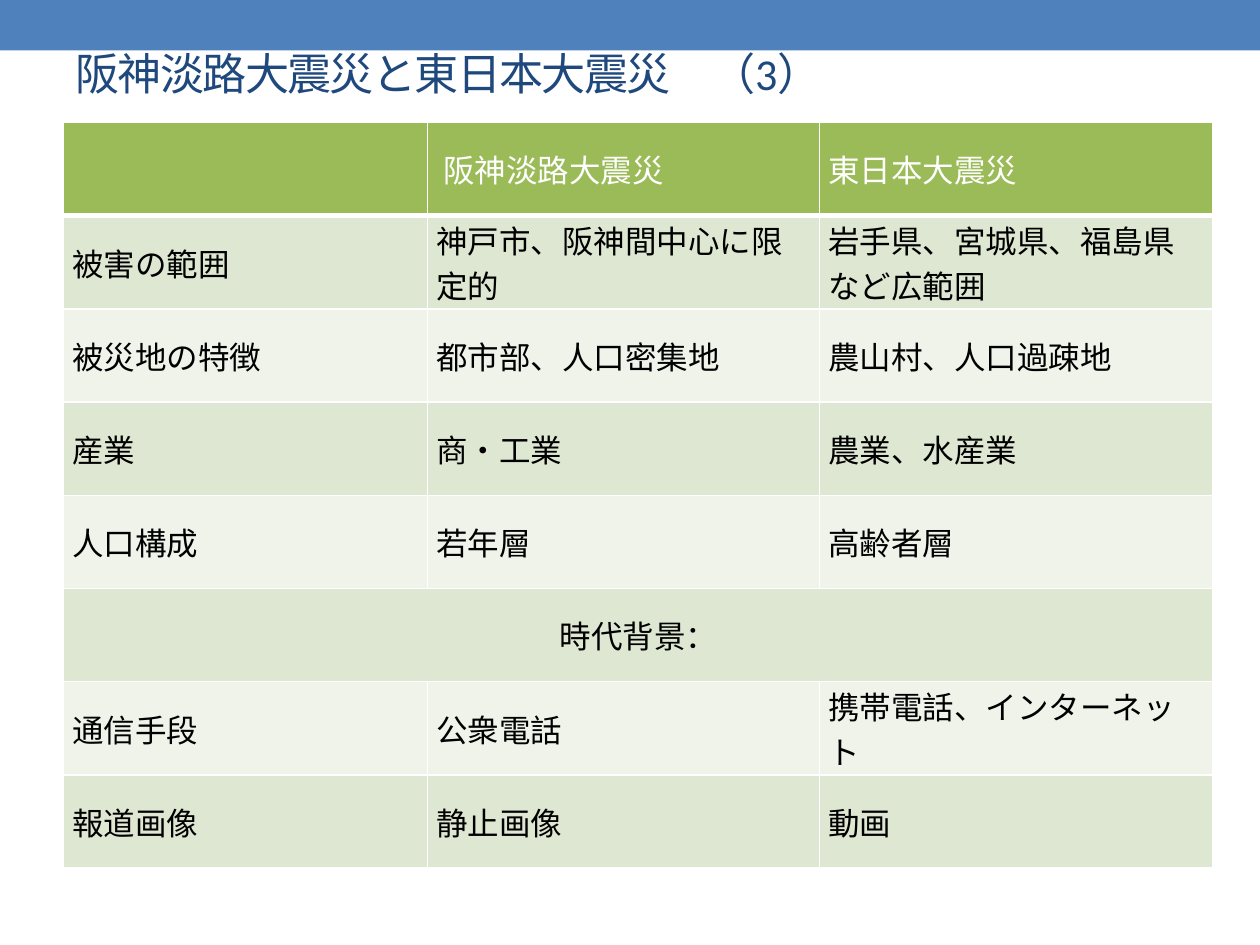
from lxml import etree
from pptx import Presentation
from pptx.dml.color import RGBColor
from pptx.enum import shapes, text
from pptx.oxml import ns
from pptx.util import Pt

WHITE = RGBColor(0xFF, 0xFF, 0xFF)
BLACK = RGBColor(0, 0, 0)
BLUE = RGBColor(0x4F, 0x81, 0xBD)
NAVY = RGBColor(0x1F, 0x49, 0x7D)
GREEN = RGBColor(0x9B, 0xBB, 0x59)
BANDS = (RGBColor(0xDE, 0xE7, 0xD1), RGBColor(0xEF, 0xF3, 0xEA))

HEADING = "阪神淡路大震災と東日本大震災\u3000（3）"
COMPARISON = [
    ("", "\u00a0阪神淡路大震災", "東日本大震災"),
    ("被害の範囲", "神戸市、阪神間中心に限定的", "岩手県、宮城県、福島県など広範囲"),
    ("被災地の特徴", "都市部、人口密集地", "農山村、人口過疎地"),
    ("産業", "商・工業", "農業、水産業"),
    ("人口構成", "若年層", "高齢者層"),
    ("時代背景：",),
    ("通信手段", "公衆電話", "携帯電話、インターネット"),
    ("報道画像", "静止画像", "動画"),
]
COLUMN_WIDTHS = (208, 224, 225)
ROW_HEIGHT = 53.28


def apply(target, values):
    for name, value in values.items():
        setattr(target, name, value)


class Deck:
    title_font = {"name": "Calibri", "size": Pt(25.2), "bold": False}
    header_font = {"name": "TeX Gyre Schola", "size": Pt(18), "bold": False}
    body_font = {"name": "Arial", "size": Pt(18), "bold": False}
    cell_format = {"margin_left": Pt(5), "margin_right": Pt(5),
                   "margin_top": 0, "margin_bottom": 0,
                   "vertical_anchor": text.MSO_ANCHOR.MIDDLE}

    def __init__(self, width, height):
        self.prs = Presentation()
        apply(self.prs, {"slide_width": Pt(width), "slide_height": Pt(height)})
        self.slide = self.prs.slides.add_slide(self.prs.slide_layouts[5])

    def band(self, left, top, width, height, color):
        band = self.slide.shapes.add_shape(
            shapes.MSO_SHAPE.RECTANGLE, Pt(left), Pt(top), Pt(width), Pt(height))
        band.shadow.inherit = False
        band.fill.solid()
        band.fill.fore_color.rgb = color
        band.line.fill.background()
        # Keep the band behind the title
        self.slide.shapes._spTree.insert(2, band._element)

    def title(self, wording, left, top, width, height):
        title = self.slide.shapes.title
        apply(title, {"left": Pt(left), "top": Pt(top),
                      "width": Pt(width), "height": Pt(height)})
        frame = title.text_frame
        apply(frame, {"text": wording, "word_wrap": True,
                      "auto_size": text.MSO_AUTO_SIZE.NONE,
                      "vertical_anchor": text.MSO_ANCHOR.MIDDLE})
        frame.paragraphs[0].alignment = text.PP_ALIGN.LEFT
        font = frame.paragraphs[0].runs[0].font
        apply(font, self.title_font)
        font.color.rgb = NAVY
        font._element.set("spc", "-100")

    def borders(self, cell, bottom):
        properties = cell._tc.get_or_add_tcPr()
        for side, points in (("L", 1), ("R", 1), ("T", 1), ("B", bottom)):
            line = etree.SubElement(properties, ns.qn(f"a:ln{side}"), w=str(Pt(points)))
            fill = etree.SubElement(line, ns.qn("a:solidFill"))
            etree.SubElement(fill, ns.qn("a:srgbClr"), val=str(WHITE))

    def cell(self, cell, wording, fill, font, color, centred, bottom):
        apply(cell, self.cell_format)
        self.borders(cell, bottom)
        cell.fill.solid()
        cell.fill.fore_color.rgb = fill
        if wording:
            cell.text = wording
            paragraph = cell.text_frame.paragraphs[0]
            paragraph.alignment = text.PP_ALIGN.CENTER if centred else text.PP_ALIGN.LEFT
            run_font = paragraph.runs[0].font
            apply(run_font, font)
            run_font.color.rgb = color

    def table(self, rows, left, top, widths, row_height):
        table = self.slide.shapes.add_table(
            len(rows), len(widths), Pt(left), Pt(top),
            Pt(sum(widths)), Pt(row_height * len(rows))).table
        for column, width in zip(table.columns, widths):
            column.width = Pt(width)
        for r, wordings in enumerate(rows):
            table.rows[r].height = Pt(row_height)
            header = r == 0
            spanning = len(wordings) == 1
            if spanning:
                table.cell(r, 0).merge(table.cell(r, len(widths) - 1))
            for c, wording in enumerate(wordings):
                self.cell(table.cell(r, c), wording,
                          fill=GREEN if header else BANDS[(r - 1) % 2],
                          font=self.header_font if header else self.body_font,
                          color=WHITE if header else BLACK,
                          centred=spanning, bottom=3 if header else 1)


def main():
    deck = Deck(720, 540)
    # Top band and heading
    deck.band(0, 0, 720, 28.8, BLUE)
    deck.title(HEADING, 36, 21.6, 648, 40.3)
    # Comparison of the two earthquakes
    deck.table(COMPARISON, 36.3, 70, COLUMN_WIDTHS, ROW_HEIGHT)
    deck.prs.save("out.pptx")


if __name__ == "__main__":
    main()
